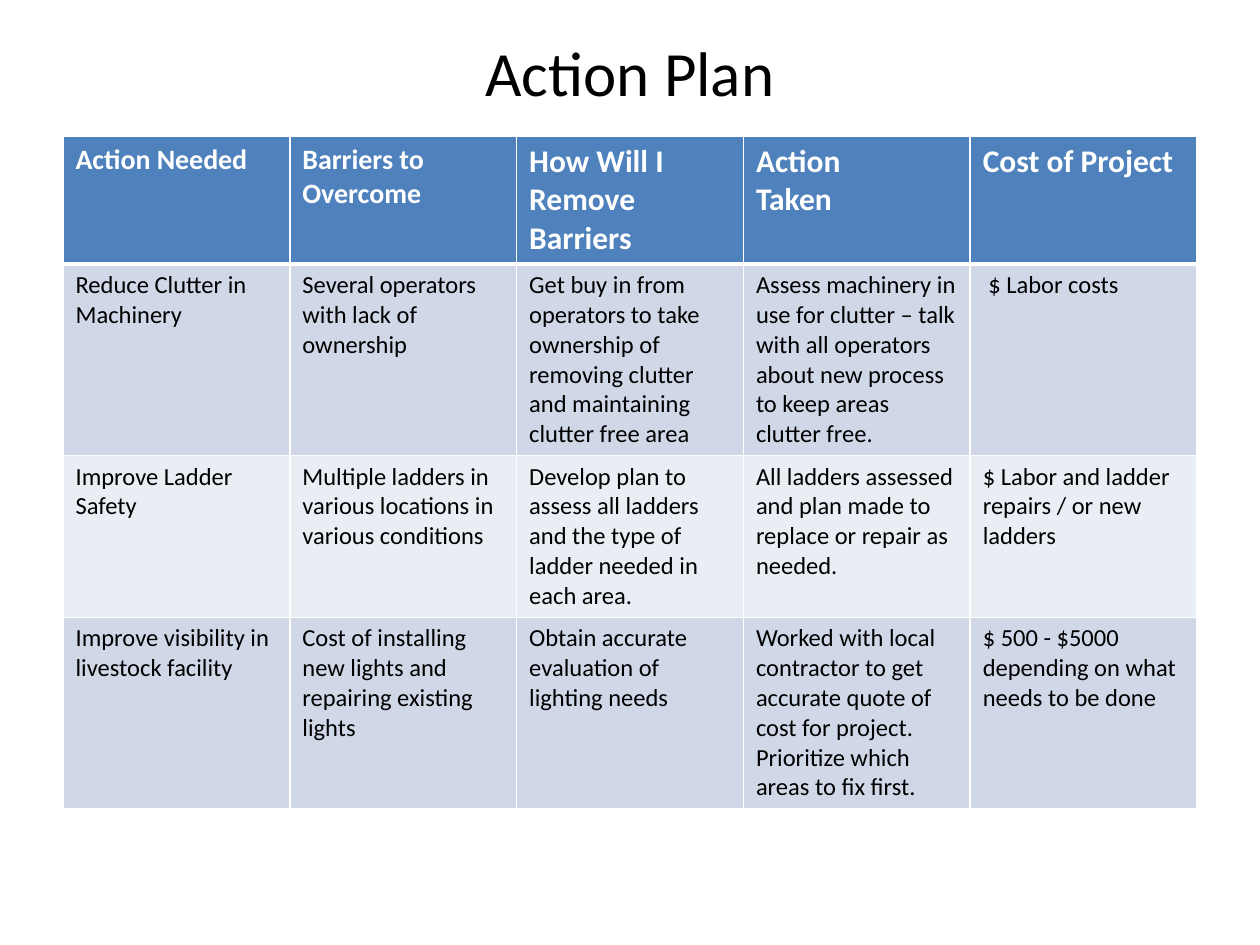
from dataclasses import dataclass

from lxml import etree
from pptx import Presentation
from pptx.dml.color import RGBColor
from pptx.enum import text
from pptx.oxml import ns
from pptx.util import Emu, Pt

EMU_PER_PX = 914400 / 126


@dataclass(frozen=True)
class Theme:
    font: str = "Calibri"
    ink: str = "000000"
    white: str = "FFFFFF"
    header_fill: str = "4F81BD"
    band_fills: tuple = ("D0D8E8", "E9EDF4")
    title_size: int = 36
    header_sizes: tuple = (16, 16, 18, 18, 18)
    body_size: int = 14
    border: int = 1
    header_rule: int = 3


THEME = Theme()

HEADERS = [
    "Action Needed",
    "Barriers to Overcome",
    "How Will I Remove Barriers",
    "Action\nTaken",
    "Cost of Project",
]
ACTIONS = [
    [
        "Reduce Clutter in Machinery",
        "Several operators with lack of ownership",
        "Get buy in from operators to take ownership of removing clutter "
        "and maintaining clutter free area",
        "Assess machinery in use for clutter – talk with all operators "
        "about new process to keep areas clutter free.",
        " $ Labor costs",
    ],
    [
        "Improve Ladder Safety",
        "Multiple ladders in various locations in various conditions",
        "Develop plan to assess all ladders and the type of ladder needed "
        "in each area.",
        "All ladders assessed and plan made to replace or repair as needed.",
        "$ Labor and ladder repairs / or new ladders",
    ],
    [
        "Improve visibility in livestock facility",
        "Cost of installing new lights and repairing existing lights",
        "Obtain accurate evaluation of lighting needs",
        "Worked with local contractor to get accurate quote of cost for "
        "project. Prioritize which areas to fix first.",
        "$ 500 - $5000 depending on what needs to be done",
    ],
]
ROW_HEIGHTS = [127, 191, 161, 191]


def px(length):
    return Emu(round(length * EMU_PER_PX))


def write_text(frame, content, size, color, bold=False, align=text.PP_ALIGN.LEFT):
    """Write each line of content as a paragraph with one run."""
    for index, line in enumerate(content.split("\n")):
        paragraph = frame.paragraphs[0] if index == 0 else frame.add_paragraph()
        paragraph.alignment = align
        run = paragraph.add_run()
        run.text = line
        run.font.name = THEME.font
        run.font.size = Pt(size)
        run.font.bold = bold
        run.font.color.rgb = RGBColor.from_string(color)


def add_title(slide, content):
    title = slide.shapes.title
    title.left, title.top, title.width, title.height = map(px, (63, 38, 1134, 67))
    frame = title.text_frame
    frame.word_wrap = True
    frame.auto_size = text.MSO_AUTO_SIZE.NONE
    frame.vertical_anchor = text.MSO_ANCHOR.MIDDLE
    write_text(frame, content, THEME.title_size, THEME.ink,
               align=text.PP_ALIGN.CENTER)


def set_borders(cell, top, bottom):
    properties = cell._tc.get_or_add_tcPr()
    widths = {"L": THEME.border, "R": THEME.border, "T": top, "B": bottom}
    for side, width in widths.items():
        line = etree.SubElement(properties, ns.qn(f"a:ln{side}"), w=str(Pt(width)))
        fill = etree.SubElement(line, ns.qn("a:solidFill"))
        etree.SubElement(fill, ns.qn("a:srgbClr"), val=THEME.white)


def fill_cell(cell, color):
    cell.fill.solid()
    cell.fill.fore_color.rgb = RGBColor.from_string(color)


def add_action_table(slide):
    table = slide.shapes.add_table(
        len(ACTIONS) + 1, len(HEADERS),
        px(63), px(136), px(1134), px(sum(ROW_HEIGHTS)),
    ).table
    for row, height in zip(table.rows, ROW_HEIGHTS):
        row.height = px(height)

    for column, (header, size) in enumerate(zip(HEADERS, THEME.header_sizes)):
        cell = table.cell(0, column)
        set_borders(cell, THEME.border, THEME.header_rule)
        fill_cell(cell, THEME.header_fill)
        write_text(cell.text_frame, header, size, THEME.white, bold=True)

    for row, action in enumerate(ACTIONS, start=1):
        top = THEME.header_rule if row == 1 else THEME.border
        for column, content in enumerate(action):
            cell = table.cell(row, column)
            set_borders(cell, top, THEME.border)
            fill_cell(cell, THEME.band_fills[(row - 1) % 2])
            write_text(cell.text_frame, content, THEME.body_size, THEME.ink)


def main():
    presentation = Presentation()
    presentation.slide_width, presentation.slide_height = px(1260), px(945)
    slide = presentation.slides.add_slide(
        presentation.slide_layouts.get_by_name("Title Only"))
    add_title(slide, "Action Plan")
    add_action_table(slide)
    presentation.save("out.pptx")


if __name__ == "__main__":
    main()
